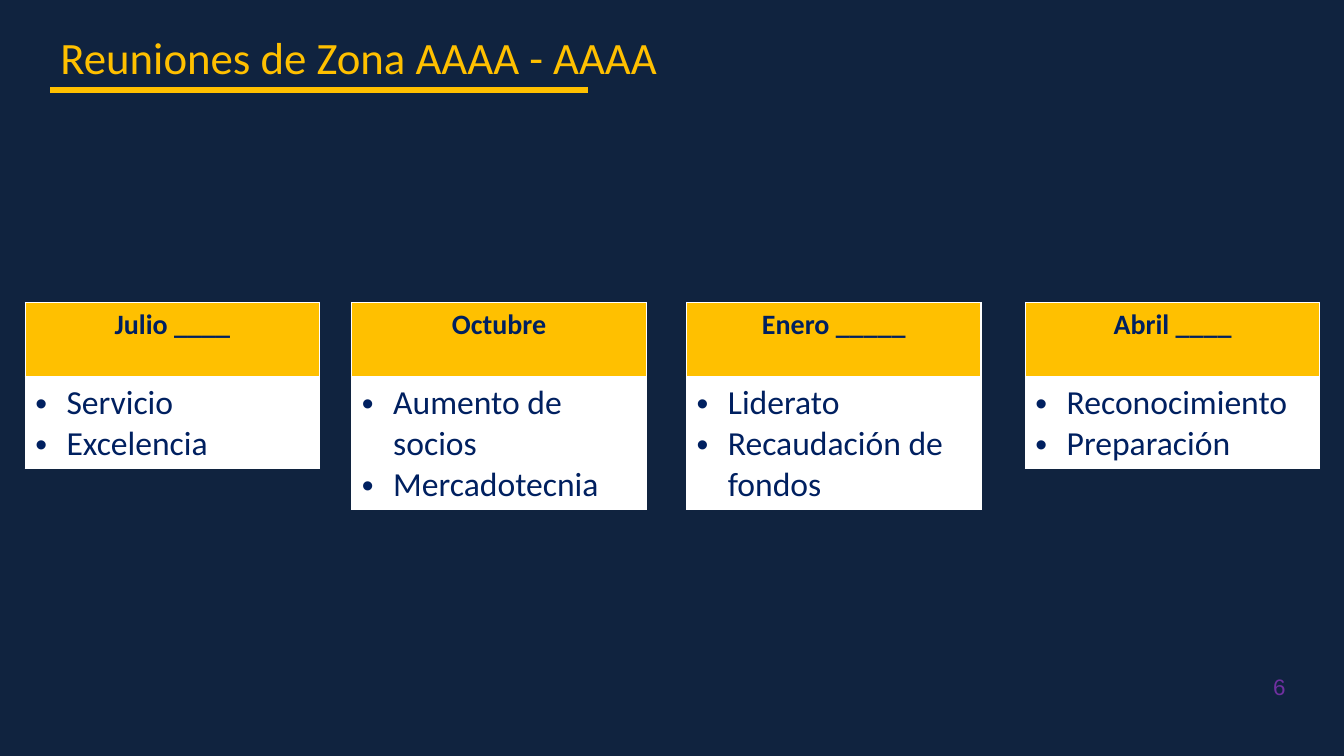
from lxml import etree
from pptx import Presentation
from pptx.dml.color import RGBColor
from pptx.enum import shapes, text
from pptx.oxml import ns
from pptx.util import Inches, Pt

NAVY, GOLD, INK, WHITE, PURPLE = "10233F", "FFC000", "002060", "FFFFFF", "7030A0"

# Each meeting: left edge, heading, topics
MEETINGS = [
    (0.25, "Julio ____", ["Servicio", "Excelencia"]),
    (3.49, "Octubre", ["Aumento de socios", "Mercadotecnia"]),
    (6.81, "Enero _____", ["Liderato", "Recaudación de fondos"]),
    (10.17, "Abril ____", ["Reconocimiento", "Preparación"]),
]


def color(value):
    return RGBColor.from_string(value)


def add_run(paragraph, words, size, hue, font="Calibri", bold=False):
    run = paragraph.add_run()
    run.text = words
    run.font.name = font
    run.font.size = Pt(size)
    run.font.bold = bold
    run.font.color.rgb = color(hue)


def style_cell(cell, fill, bottom_width):
    cell.fill.solid()
    cell.fill.fore_color.rgb = color(fill)
    properties = cell._tc.get_or_add_tcPr()
    # Borders come before the fill in the cell properties
    for index, side in enumerate("LRTB"):
        width = bottom_width if side == "B" else 1
        border = etree.Element(ns.qn(f"a:ln{side}"), w=str(Pt(width)))
        solid = etree.SubElement(border, ns.qn("a:solidFill"))
        etree.SubElement(solid, ns.qn("a:srgbClr"), val=WHITE)
        properties.insert(index, border)


def add_bullet(paragraph):
    properties = paragraph._p.get_or_add_pPr()
    indent = Inches(0.31)
    properties.set("marL", str(indent))
    properties.set("indent", str(-indent))
    etree.SubElement(properties, ns.qn("a:buFont"), typeface="Arial")
    etree.SubElement(properties, ns.qn("a:buChar"), char="•")


def add_title(slide, left, top, width, height):
    title = slide.shapes.add_textbox(Inches(left), Inches(top), Inches(width), Inches(height))
    title.text_frame.word_wrap = True
    add_run(title.text_frame.paragraphs[0], "Reuniones de Zona AAAA - AAAA", 32, GOLD)

    # Underline along the bottom of the title
    base = Inches(top + height)
    underline = slide.shapes.add_connector(
        shapes.MSO_CONNECTOR.STRAIGHT, Inches(left), base, Inches(left + 5.33), base)
    underline.line.color.rgb = color(GOLD)
    underline.line.width = Pt(4.5)
    etree.SubElement(underline._element.spPr, ns.qn("a:effectLst"))


def add_meeting(slide, left, top, width, month, topics):
    frame = slide.shapes.add_table(
        2, 1, Inches(left), Inches(top), Inches(width), Inches(1.59))
    table = frame.table
    table.rows[0].height = Inches(0.75)
    table.rows[1].height = Inches(0.84)
    heading, body = table.cell(0, 0), table.cell(1, 0)
    style_cell(heading, GOLD, 3)
    style_cell(body, WHITE, 1)

    # Month
    month_line = heading.text_frame.paragraphs[0]
    month_line.alignment = text.PP_ALIGN.CENTER
    add_run(month_line, month, 20, INK, bold=True)

    # Topics
    for index, topic in enumerate(topics):
        frame_text = body.text_frame
        topic_line = frame_text.add_paragraph() if index else frame_text.paragraphs[0]
        add_bullet(topic_line)
        add_run(topic_line, topic, 24, INK)


def add_page_number(slide, left, top, width, height):
    box = slide.shapes.add_textbox(Inches(left), Inches(top), Inches(width), Inches(height))
    number = box.text_frame
    number.word_wrap = True
    number.margin_left = number.margin_right = 0
    number.vertical_anchor = text.MSO_ANCHOR.MIDDLE
    number.paragraphs[0].alignment = text.PP_ALIGN.RIGHT
    add_run(number.paragraphs[0], "6", 16, PURPLE, font="Arial")


def main():
    deck = Presentation()
    deck.slide_width, deck.slide_height = Inches(13.33), Inches(7.5)
    slide = deck.slides.add_slide(deck.slide_layouts[6])
    slide.background.fill.solid()
    slide.background.fill.fore_color.rgb = color(NAVY)

    add_page_number(slide, 12.14, 6.63, 0.61, 0.37)
    add_title(slide, 0.5, 0.25, 6.31, 0.64)
    for left, month, topics in MEETINGS:
        add_meeting(slide, left, 3, 2.92, month, topics)

    deck.save("out.pptx")


if __name__ == "__main__":
    main()
